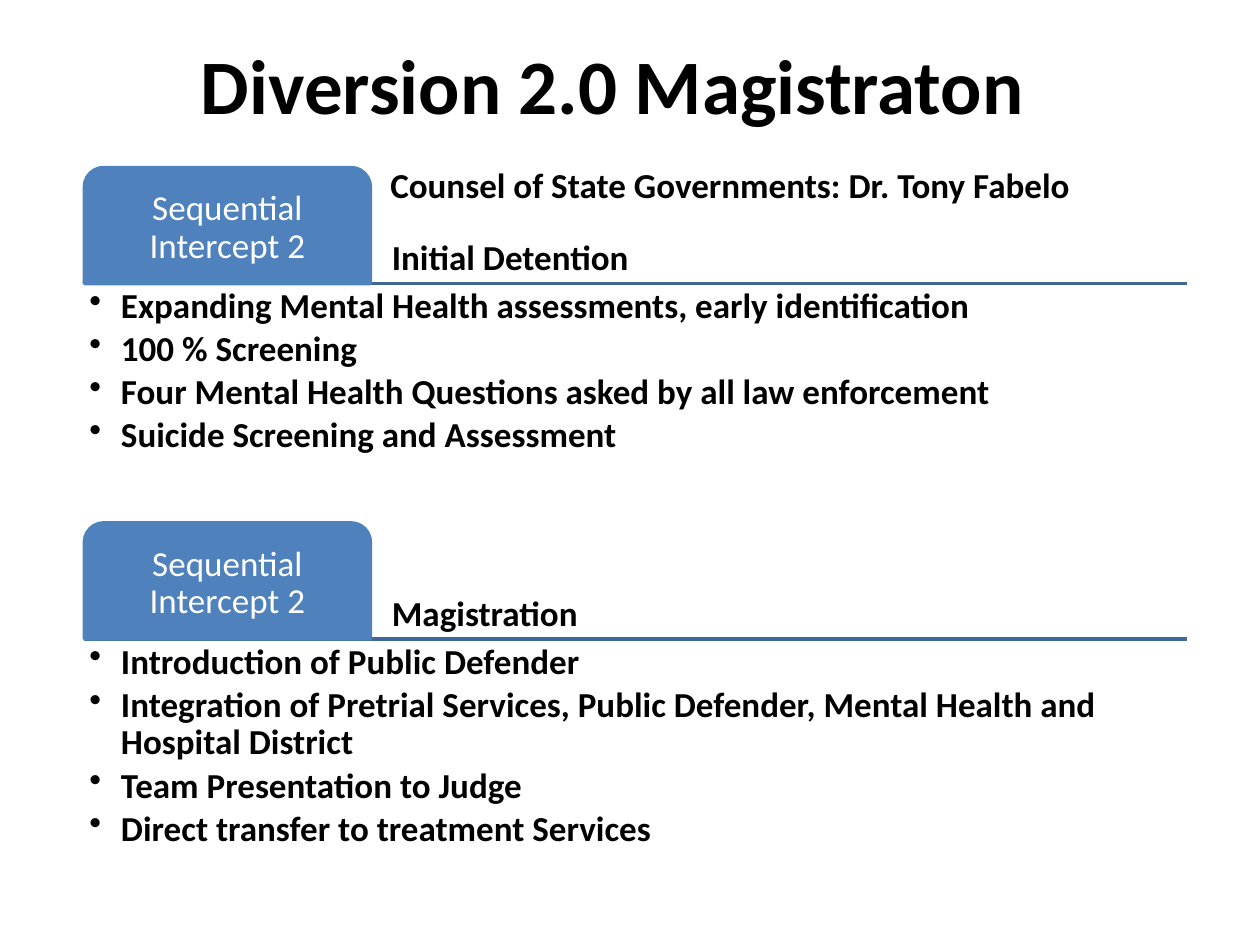
from dataclasses import dataclass

from lxml import etree
from pptx import Presentation
from pptx.dml.color import RGBColor
from pptx.enum.shapes import MSO_CONNECTOR, MSO_SHAPE
from pptx.enum.text import MSO_ANCHOR, PP_ALIGN
from pptx.oxml.ns import qn
from pptx.util import Inches, Pt

STRAIGHT = MSO_CONNECTOR.STRAIGHT
TAB_SHAPE = MSO_SHAPE.ROUND_2_SAME_RECTANGLE
TOP, MIDDLE, BOTTOM = MSO_ANCHOR.TOP, MSO_ANCHOR.MIDDLE, MSO_ANCHOR.BOTTOM
LEFT, CENTER = PP_ALIGN.LEFT, PP_ALIGN.CENTER


@dataclass(frozen=True)
class Theme:
    font: str = "Calibri"
    title_size: int = 44
    body_size: int = 20
    text: RGBColor = RGBColor(0, 0, 0)
    tab: RGBColor = RGBColor(0x4F, 0x81, 0xBD)
    tab_text: RGBColor = RGBColor(0xFF, 0xFF, 0xFF)
    rule: RGBColor = RGBColor(0x3F, 0x67, 0x97)
    line_width: int = 2


THEME = Theme()
SECTION_LEFT = 0.67
SECTION_WIDTH = 8.75
TAB_WIDTH = 2.27
TAB_HEIGHT = 0.92
INSET = 0.04
HEADING_INSET = 0.17
BULLET_INDENT = 0.25
BULLET_GAP = 3
LINE_SPACING = 0.9

SECTIONS = [
    (1.33, "Sequential Intercept 2", "Initial Detention", [
        "Expanding Mental Health assessments, early identification",
        "100 % Screening",
        "Four Mental Health Questions asked by all law enforcement",
        "Suicide Screening and Assessment",
    ]),
    (4.15, "Sequential Intercept 2", "Magistration", [
        "Introduction of Public Defender",
        "Integration of Pretrial Services, Public Defender, Mental Health and Hospital District",
        "Team Presentation to Judge",
        "Direct transfer to treatment Services",
    ]),
]


def set_frame(frame, anchor, left=INSET, others=INSET, wrap=True):
    frame.word_wrap = wrap
    frame.vertical_anchor = anchor
    frame.margin_left = Inches(left)
    frame.margin_top = frame.margin_right = frame.margin_bottom = Inches(others)


def write(paragraph, text, size=THEME.body_size, color=THEME.text, bold=True,
          align=LEFT, spacing=LINE_SPACING):
    paragraph.alignment = align
    paragraph.line_spacing = spacing
    run = paragraph.add_run()
    run.text = text
    run.font.name = THEME.font
    run.font.size = Pt(size)
    run.font.bold = bold
    run.font.color.rgb = color


def add_box(slide, left, top, width, height):
    return slide.shapes.add_textbox(
        Inches(left), Inches(top), Inches(width), Inches(height)).text_frame


def add_caption(slide, text, left, top, width, height, size, align):
    frame = add_box(slide, left, top, width, height)
    set_frame(frame, TOP, left=0.1, others=0.05, wrap=False)
    write(frame.paragraphs[0], text, size=size, align=align, spacing=1.0)


def add_rule(slide, top):
    rule = slide.shapes.add_connector(
        STRAIGHT, Inches(SECTION_LEFT), Inches(top),
        Inches(SECTION_LEFT + SECTION_WIDTH), Inches(top))
    rule.line.color.rgb = THEME.rule
    rule.line.width = Pt(THEME.line_width)
    etree.SubElement(rule.element.spPr, qn("a:effectLst"))


def add_tab(slide, label, top):
    tab = slide.shapes.add_shape(
        TAB_SHAPE, Inches(SECTION_LEFT), Inches(top),
        Inches(TAB_WIDTH), Inches(TAB_HEIGHT))
    tab.shadow.inherit = False
    tab.fill.solid()
    tab.fill.fore_color.rgb = THEME.tab
    tab.line.color.rgb = THEME.tab
    tab.line.width = Pt(THEME.line_width)
    set_frame(tab.text_frame, MIDDLE)
    write(tab.text_frame.paragraphs[0], label,
          color=THEME.tab_text, bold=False, align=CENTER)


def add_heading(slide, text, top):
    frame = add_box(slide, SECTION_LEFT + TAB_WIDTH, top,
                    SECTION_WIDTH - TAB_WIDTH, TAB_HEIGHT)
    set_frame(frame, BOTTOM, left=HEADING_INSET)
    write(frame.paragraphs[0], text)


def add_bullets(slide, items, top):
    frame = add_box(slide, SECTION_LEFT, top, SECTION_WIDTH, 1.84)
    set_frame(frame, TOP)
    for index, item in enumerate(items):
        paragraph = frame.add_paragraph() if index else frame.paragraphs[0]
        write(paragraph, item)
        paragraph.space_after = Pt(BULLET_GAP)
        properties = paragraph._p.get_or_add_pPr()
        properties.set("marL", str(Inches(BULLET_INDENT)))
        properties.set("indent", str(-Inches(BULLET_INDENT)))
        etree.SubElement(properties, qn("a:buChar"), char="•")


def add_section(slide, top, label, heading, items):
    bottom = top + TAB_HEIGHT
    add_rule(slide, bottom)
    add_heading(slide, heading, top)
    add_tab(slide, label, top)
    add_bullets(slide, items, bottom)


def main():
    presentation = Presentation()
    presentation.slide_width = Inches(10)
    presentation.slide_height = Inches(7.5)
    slide = presentation.slides.add_slide(presentation.slide_layouts[6])
    for section in SECTIONS:
        add_section(slide, *section)
    add_caption(slide, "Diversion 2.0 Magistraton",
                1.44, 0.25, 6.8, 0.84, THEME.title_size, CENTER)
    add_caption(slide, "Counsel of State Governments: Dr. Tony Fabelo",
                3, 1.25, 5.64, 0.44, THEME.body_size, LEFT)
    presentation.save("out.pptx")


if __name__ == "__main__":
    main()
